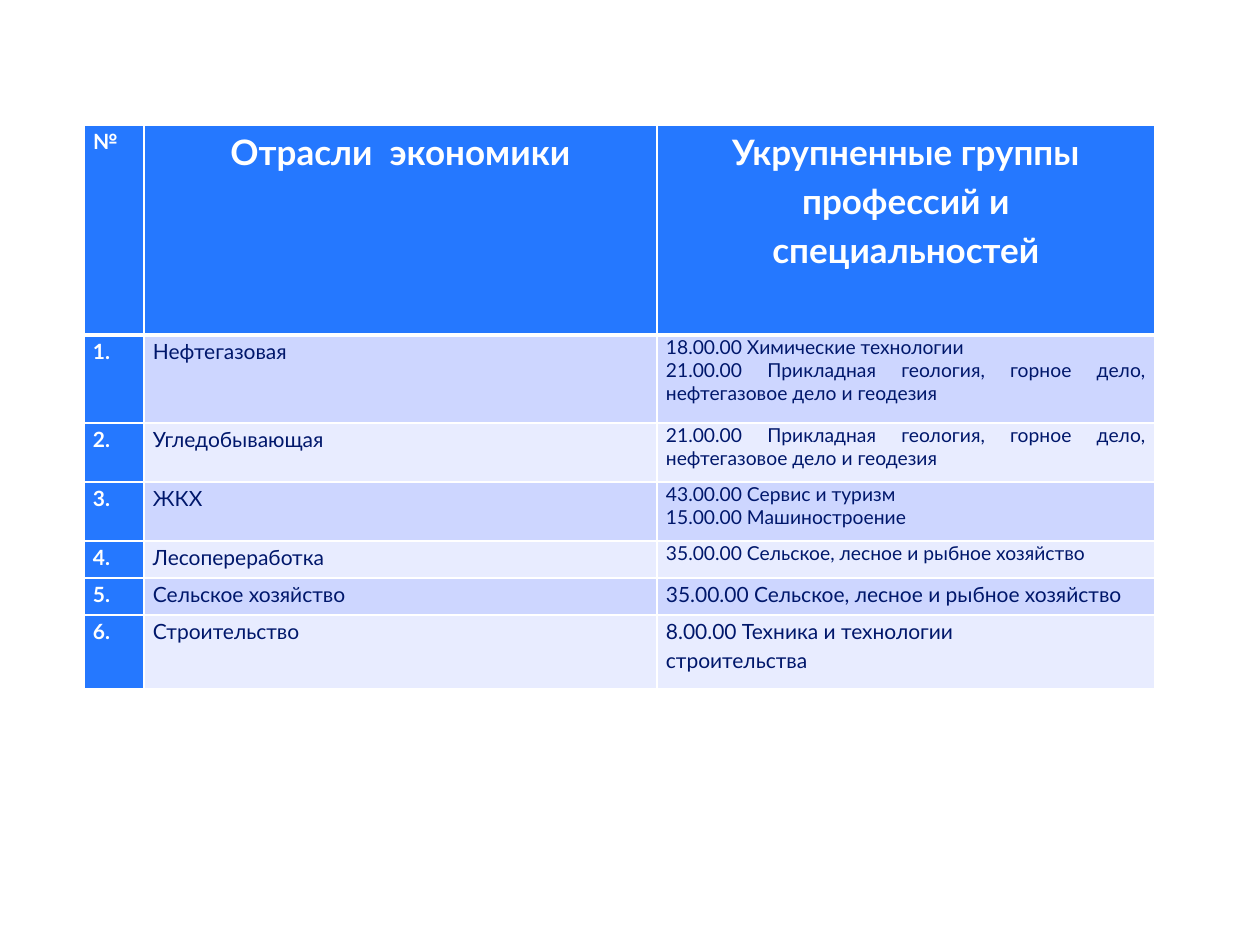
from lxml import etree
from pptx import Presentation
from pptx.dml.color import RGBColor
from pptx.enum.text import PP_ALIGN
from pptx.oxml.ns import qn
from pptx.util import Emu, Pt

PIXEL = 914400 / 126
FONT = "Lato"
WHITE, BLUE, NAVY = "FFFFFF", "2578FF", "00176B"
BANDS = ("CDD6FF", "E8ECFF")
COLUMN_WIDTHS = (60, 513, 498)
ROW_HEIGHTS = (210, 88, 59, 59, 37, 37, 74)
HEADINGS = (
    ("№", 12, PP_ALIGN.JUSTIFY),
    ("Отрасли  экономики", 20, PP_ALIGN.CENTER),
    ("Укрупненные группы профессий и специальностей", 20, PP_ALIGN.CENTER),
)
GEOLOGY = "21.00.00 Прикладная геология, горное дело, нефтегазовое дело и геодезия"
FARMING = "35.00.00 Сельское, лесное и рыбное хозяйство"
INDUSTRIES = (
    ("Нефтегазовая", ("18.00.00 Химические технологии", GEOLOGY), 11, 1.0),
    ("Угледобывающая", (GEOLOGY,), 11, 1.0),
    ("ЖКХ", ("43.00.00 Сервис и туризм", "15.00.00 Машиностроение"), 11, 1.0),
    ("Лесопереработка", (FARMING,), 11, 1.0),
    ("Сельское хозяйство", (FARMING,), 12, 1.15),
    ("Строительство", ("8.00.00 Техника и технологии", "строительства"), 12, 1.15),
)


def px(length):
    """Convert pixels to EMU."""
    return Emu(round(length * PIXEL))


def color(value):
    """Convert a hex string to a colour."""
    return RGBColor.from_string(value)


def set_borders(cell, top=1, bottom=1):
    """Draw white borders, with widths in points, around a cell."""
    properties = cell._tc.get_or_add_tcPr()
    widths = {"a:lnL": 1, "a:lnR": 1, "a:lnT": top, "a:lnB": bottom}
    for position, (tag, width) in enumerate(widths.items()):
        line = etree.Element(qn(tag), w=str(Pt(width)))
        fill = etree.SubElement(line, qn("a:solidFill"))
        etree.SubElement(fill, qn("a:srgbClr"), val=WHITE)
        properties.insert(position, line)


def fill_cell(cell, lines, fill, font_color, size=12, bold=False,
              alignment=PP_ALIGN.JUSTIFY, spacing=1.15):
    """Fill a cell and write one paragraph per line."""
    cell.fill.solid()
    cell.fill.fore_color.rgb = color(fill)
    cell.margin_left = cell.margin_right = px(9)
    cell.margin_top = cell.margin_bottom = 0
    frame = cell.text_frame
    for index, line in enumerate(lines):
        paragraph = frame.add_paragraph() if index else frame.paragraphs[0]
        paragraph.alignment = alignment
        paragraph.line_spacing = spacing
        run = paragraph.add_run()
        run.text = line
        run.font.name = FONT
        run.font.size = Pt(size)
        run.font.bold = bold
        run.font.color.rgb = color(font_color)


def add_grid(slide):
    """Add the empty table with its column and row sizes."""
    shape = slide.shapes.add_table(
        len(ROW_HEIGHTS), len(COLUMN_WIDTHS), px(84), px(125),
        px(sum(COLUMN_WIDTHS)), px(sum(ROW_HEIGHTS)))
    table = shape.table
    for column, width in zip(table.columns, COLUMN_WIDTHS):
        column.width = px(width)
    for row, height in zip(table.rows, ROW_HEIGHTS):
        row.height = px(height)
    return table


def fill_header(table):
    """Write the heading row."""
    for column, (heading, size, alignment) in enumerate(HEADINGS):
        cell = table.cell(0, column)
        fill_cell(cell, (heading,), BLUE, WHITE, size, True, alignment)
        set_borders(cell, bottom=3)


def fill_industries(table):
    """Write one numbered row per industry."""
    for number, (industry, groups, size, spacing) in enumerate(INDUSTRIES, 1):
        band = BANDS[(number - 1) % 2]
        number_cell, industry_cell, group_cell = table.rows[number].cells
        fill_cell(number_cell, (f"{number}.",), BLUE, WHITE, bold=True)
        fill_cell(industry_cell, (industry,), band, NAVY)
        fill_cell(group_cell, groups, band, NAVY, size, spacing=spacing)
        for cell in (number_cell, industry_cell, group_cell):
            set_borders(cell, top=3 if number == 1 else 1)


def main():
    """Build and save the slide."""
    presentation = Presentation()
    presentation.slide_width = px(1260)
    presentation.slide_height = px(945)
    slide = presentation.slides.add_slide(presentation.slide_layouts[6])
    table = add_grid(slide)
    fill_header(table)
    fill_industries(table)
    presentation.save("out.pptx")


if __name__ == "__main__":
    main()
